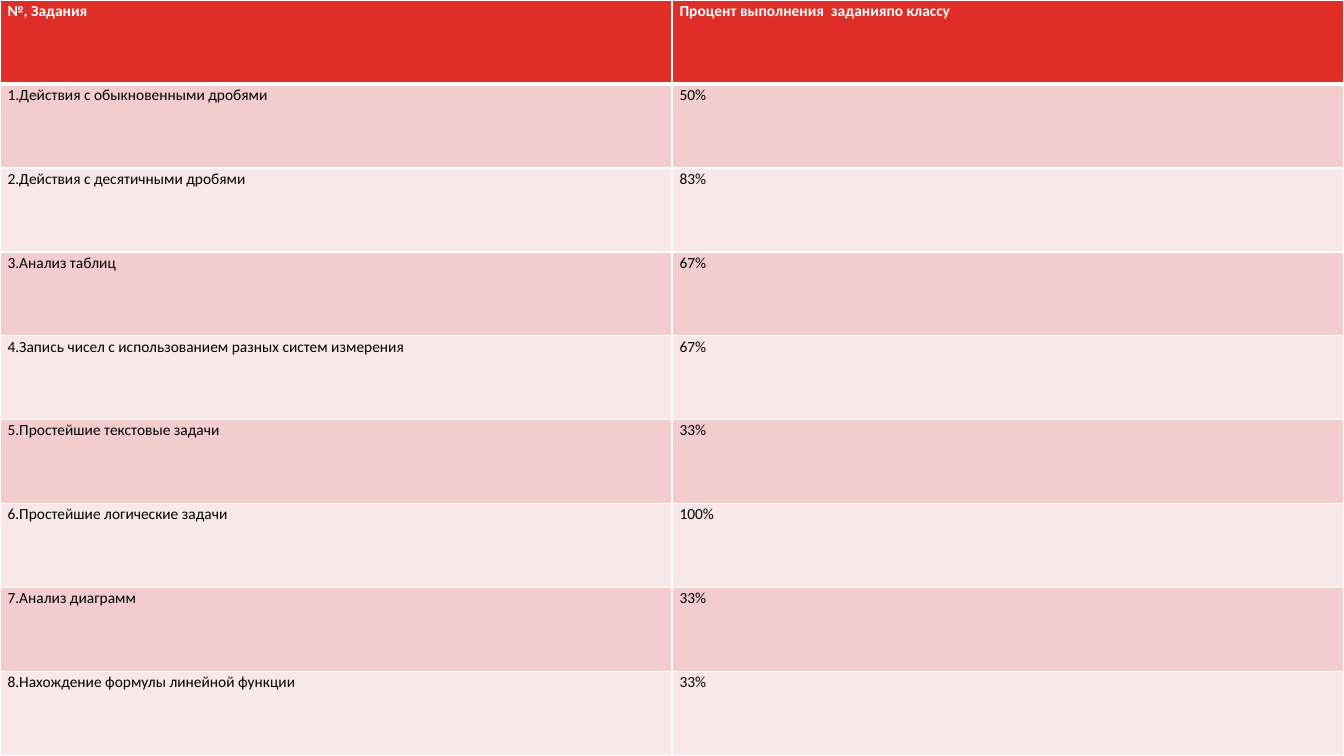
"""Build a slide with the class results for each task as a table."""
from lxml import etree
from pptx import Presentation
from pptx import util as u
from pptx.dml.color import RGBColor
from pptx.oxml.ns import qn

COLORS = {
    "background": "000000",
    "header": "DF2E28",
    "odd": "F3CDCD",
    "even": "F9E8E8",
    "border": "FFFFFF",
    "header_text": "FFFFFF",
    "body_text": "000000",
}
SLIDE_WIDTH, SLIDE_HEIGHT = u.Cm(33.87), u.Cm(19.05)
HEADER = ("№, Задания", "Процент выполнения  заданияпо классу")
RESULTS = [
    ("1.Действия с обыкновенными дробями", "50%"),
    ("2.Действия с десятичными дробями", "83%"),
    ("3.Анализ таблиц", "67%"),
    ("4.Запись чисел с использованием разных систем измерения", "67%"),
    ("5.Простейшие текстовые задачи", "33%"),
    ("6.Простейшие логические задачи", "100%"),
    ("7.Анализ диаграмм", "33%"),
    ("8.Нахождение формулы линейной функции", "33%"),
]


def color(key):
    return RGBColor.from_string(COLORS[key])


def add_border(cell, side, points):
    properties = cell._tc.get_or_add_tcPr()
    line = etree.SubElement(properties, qn(f"a:ln{side}"), w=str(u.Pt(points)))
    fill = etree.SubElement(line, qn("a:solidFill"))
    etree.SubElement(fill, qn("a:srgbClr"), val=COLORS["border"])


def fill_cell(cell, content, row_number):
    is_header = row_number == 0
    widths = {"L": 1, "R": 1, "T": 3 if row_number == 1 else 1, "B": 3 if is_header else 1}
    for side, points in widths.items():
        add_border(cell, side, points)
    cell.fill.solid()
    band = "header" if is_header else "odd" if row_number % 2 else "even"
    cell.fill.fore_color.rgb = color(band)
    cell.margin_left = cell.margin_right = u.Cm(0.19)
    cell.margin_top = cell.margin_bottom = 0
    cell.text_frame.text = content
    paragraph = cell.text_frame.paragraphs[0]
    paragraph.line_spacing = 1.07
    font = paragraph.runs[0].font
    font.name, font.size, font.bold = "Calibri", u.Pt(11), is_header
    font.color.rgb = color("header_text" if is_header else "body_text")


def add_results_table(slide, rows):
    results = slide.shapes.add_table(
        len(rows), len(HEADER), 0, 0, SLIDE_WIDTH, SLIDE_HEIGHT
    ).table
    for row_number, contents in enumerate(rows):
        results.rows[row_number].height = SLIDE_HEIGHT // len(rows)
        for column, content in enumerate(contents):
            fill_cell(results.cell(row_number, column), content, row_number)


def main():
    deck = Presentation()
    deck.slide_width, deck.slide_height = SLIDE_WIDTH, SLIDE_HEIGHT
    slide = deck.slides.add_slide(deck.slide_layouts[6])
    slide.background.fill.solid()
    slide.background.fill.fore_color.rgb = color("background")
    add_results_table(slide, [HEADER, *RESULTS])
    deck.save("out.pptx")


if __name__ == "__main__":
    main()
